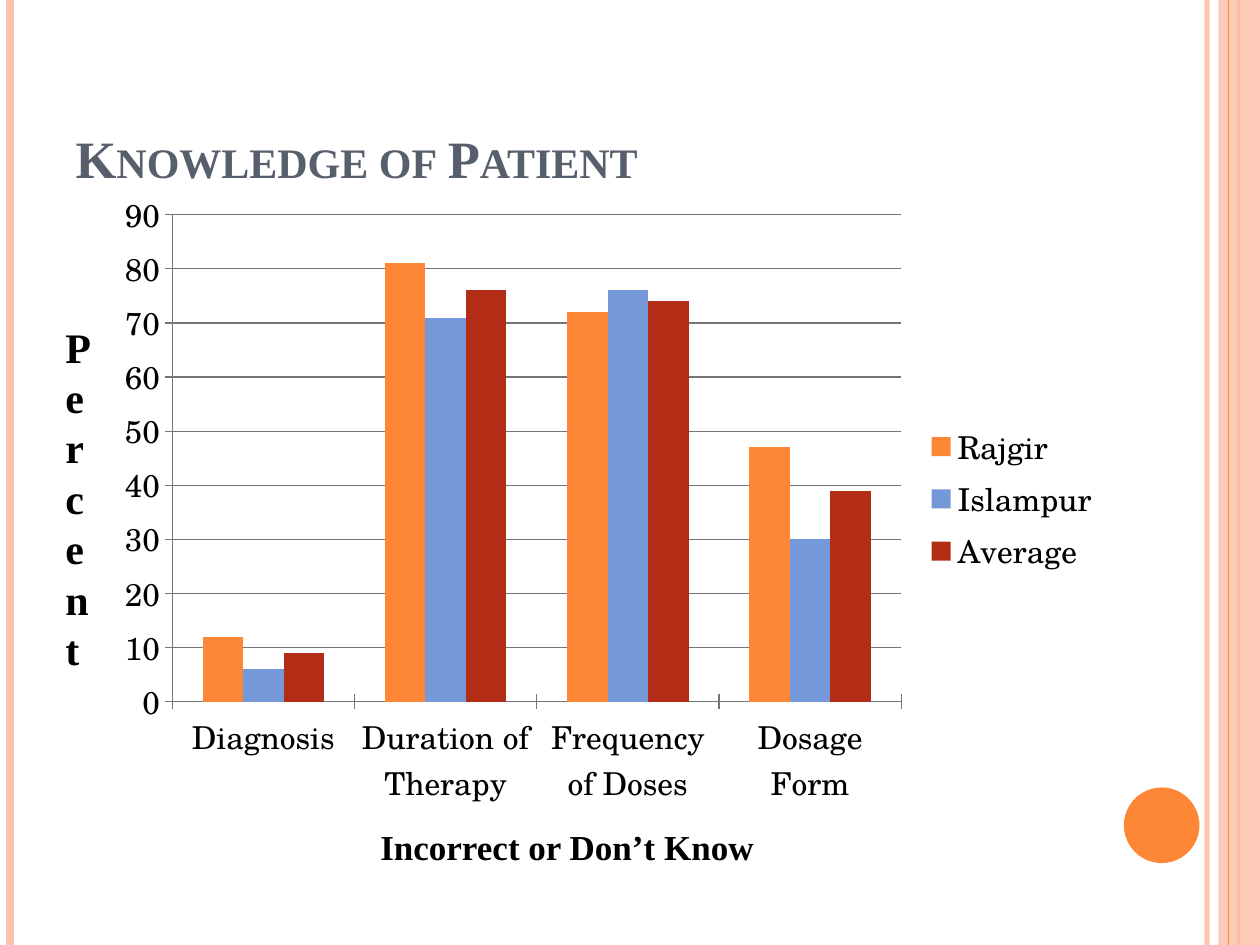
"""Build the patient knowledge chart slide."""
from dataclasses import dataclass

from lxml import etree
from pptx import Presentation
from pptx import util as u
from pptx.chart.data import CategoryChartData
from pptx.dml.color import RGBColor
from pptx.enum import chart as ch, shapes, text
from pptx.oxml.ns import qn


@dataclass(frozen=True)
class Theme:
    heading: str = "575F6D"
    ink: str = "000000"
    grid: str = "747479"
    orange: str = "FE8637"
    peach: str = "FEC3AE"
    blue: str = "7598D9"
    red: str = "B32C16"
    text_font: str = "Times New Roman"
    chart_font: str = "TeX Gyre Schola"
    title_size: int = 30
    side_size: int = 24
    caption_size: int = 20
    chart_size: int = 18


THEME = Theme()


def rgb(color):
    return RGBColor.from_string(color)


def set_alpha(element, percent):
    color = element.find(".//" + qn("a:srgbClr"))
    etree.SubElement(color, qn("a:alpha"), val=str(percent * 1000))


def add_rule(slide, x, color, weight, alpha=100):
    rule = slide.shapes.add_connector(
        shapes.MSO_CONNECTOR.STRAIGHT, u.Inches(x), 0, u.Inches(x), u.Inches(7.5))
    rule.line.color.rgb = rgb(color)
    rule.line.width = u.Pt(weight)
    properties = rule._element.spPr
    if alpha < 100:
        set_alpha(properties, alpha)
    etree.SubElement(properties, qn("a:effectLst"))


def add_block(slide, preset, box, color, alpha=100):
    block = slide.shapes.add_shape(preset, *map(u.Inches, box))
    block.shadow.inherit = False
    block.fill.solid()
    block.fill.fore_color.rgb = rgb(color)
    block.line.fill.background()
    if alpha < 100:
        set_alpha(block._element.spPr, alpha)


def write_text(holder, words, size, color=THEME.ink, small_caps=False):
    frame = holder.text_frame
    frame.word_wrap = True
    paragraph = frame.paragraphs[0]
    paragraph.alignment = text.PP_ALIGN.LEFT
    run = paragraph.add_run()
    run.text = words
    run.font.name = THEME.text_font
    run.font.size = u.Pt(size)
    run.font.bold = True
    run.font.color.rgb = rgb(color)
    if small_caps:
        run._r.get_or_add_rPr().set("cap", "small")


def add_label(slide, words, box, size):
    label = slide.shapes.add_textbox(*map(u.Inches, box))
    write_text(label, words, size)
    label.text_frame.auto_size = text.MSO_AUTO_SIZE.SHAPE_TO_FIT_TEXT


def add_title(slide, words):
    title = slide.shapes.title
    title.left, title.top, title.width, title.height = map(
        u.Inches, (0.5, 0.3, 8.17, 1.25))
    write_text(title, words, THEME.title_size, THEME.heading, small_caps=True)
    title.text_frame.vertical_anchor = text.MSO_ANCHOR.BOTTOM
    title.text_frame.auto_size = text.MSO_AUTO_SIZE.NONE


def add_decoration(slide):
    add_rule(slide, 9.58, THEME.peach, 3, alpha=93)
    add_rule(slide, 0.08, THEME.peach, 4.5)
    add_rule(slide, 9.83, THEME.orange, 1.5)
    add_block(slide, shapes.MSO_SHAPE.RECTANGLE, (9.67, 0, 0.33, 7.5),
              THEME.peach, alpha=87)
    add_rule(slide, 9.75, THEME.orange, 0.75)
    add_block(slide, shapes.MSO_SHAPE.OVAL, (8.92, 6.25, 0.6, 0.6), THEME.orange)


def style_axis(axis):
    axis.major_tick_mark = ch.XL_TICK_MARK.CROSS
    axis.minor_tick_mark = ch.XL_TICK_MARK.NONE
    axis.format.line.color.rgb = rgb(THEME.grid)


def add_knowledge_chart(slide):
    towns = (
        ("Rajgir", (12, 81, 72, 47), THEME.orange),
        ("Islampur", (6, 71, 76, 30), THEME.blue),
        ("Average", (9, 76, 74, 39), THEME.red),
    )
    answers = CategoryChartData(number_format="General")
    answers.categories = ["Diagnosis", "Duration of Therapy",
                          "Frequency of Doses", "Dosage Form"]
    for town, percents, _ in towns:
        answers.add_series(town, percents)
    chart = slide.shapes.add_chart(
        ch.XL_CHART_TYPE.COLUMN_CLUSTERED,
        *map(u.Inches, (0.83, 1.42, 8, 5.08)), answers).chart
    chart.has_title = False
    chart.font.name = THEME.chart_font
    chart.font.size = u.Pt(THEME.chart_size)
    chart.font.color.rgb = rgb(THEME.ink)
    chart.has_legend = True
    chart.legend.position = ch.XL_LEGEND_POSITION.RIGHT
    chart.legend.include_in_layout = False

    style_axis(chart.category_axis)
    percent_axis = chart.value_axis
    style_axis(percent_axis)
    percent_axis.minimum_scale = 0
    percent_axis.maximum_scale = 90
    percent_axis.major_unit = 10
    percent_axis.has_major_gridlines = True
    percent_axis.major_gridlines.format.line.color.rgb = rgb(THEME.grid)

    columns = chart.plots[0]
    columns.vary_by_categories = False
    columns.gap_width = 150
    columns.overlap = 0
    for series, (_, _, color) in zip(columns.series, towns):
        series.invert_if_negative = False
        series.format.fill.solid()
        series.format.fill.fore_color.rgb = rgb(color)


def main():
    deck = Presentation()
    deck.slide_width, deck.slide_height = u.Inches(10), u.Inches(7.5)
    slide = deck.slides.add_slide(deck.slide_layouts.get_by_name("Title Only"))
    add_decoration(slide)
    add_title(slide, "Knowledge of Patient")
    add_knowledge_chart(slide)
    add_label(slide, "Incorrect or Don’t Know", (2.92, 6.5, 4.17, 0.44),
              THEME.caption_size)
    add_label(slide, "Percent", (0.42, 2.5, 0.33, 2.93), THEME.side_size)
    deck.save("out.pptx")


if __name__ == "__main__":
    main()
